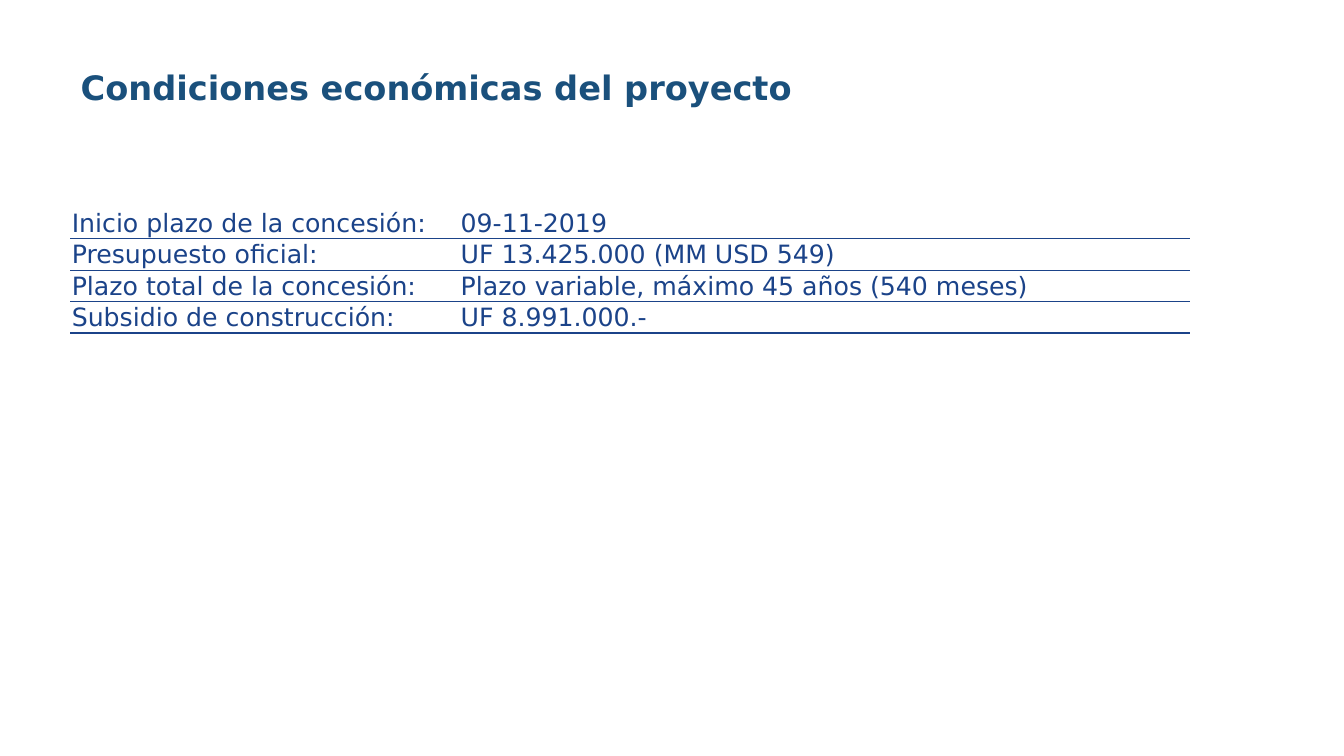
from typing import NamedTuple

import lxml.etree
import pptx
import pptx.dml.color
import pptx.enum.text
import pptx.oxml.ns
import pptx.slide
import pptx.table
import pptx.text.text
import pptx.util
from pptx.dml.color import RGBColor
from pptx.util import Cm

FONT_NAME = "DejaVu Sans"
TITLE_BLUE = RGBColor(0x1A, 0x50, 0x7C)
TABLE_BLUE = RGBColor(0x1B, 0x43, 0x89)
WHITE = RGBColor(0xFF, 0xFF, 0xFF)

LEFT = Cm(1.78)
COLUMN_WIDTHS = (Cm(9.8), Cm(18.4))
ROW_HEIGHT = Cm(0.79)
CELL_INSET = Cm(0.03)
BORDER_WIDTH = pptx.util.Pt(1)


class Condition(NamedTuple):
    label: str
    value: str


CONDITIONS = (
    Condition("Inicio plazo de la concesión:", "09-11-2019"),
    Condition("Presupuesto oficial:", "UF 13.425.000 (MM USD 549)"),
    Condition("Plazo total de la concesión:", "Plazo variable, máximo 45 años (540 meses)"),
    Condition("Subsidio de construcción:", "UF 8.991.000.-"),
)


def format_text(
    text_frame: pptx.text.text.TextFrame, size: int, color: RGBColor, bold: bool
) -> None:
    paragraph = text_frame.paragraphs[0]
    paragraph.alignment = pptx.enum.text.PP_ALIGN.LEFT
    for run in paragraph.runs:
        run.font.name = FONT_NAME
        run.font.size = pptx.util.Pt(size)
        run.font.bold = bold
        run.font.color.rgb = color


def set_borders(cell: pptx.table._Cell, top_color: RGBColor) -> None:
    """Rule the cell above and below, with white sides."""
    qualified = pptx.oxml.ns.qn
    properties = cell._tc.get_or_add_tcPr()
    borders = (("L", WHITE), ("R", WHITE), ("T", top_color), ("B", TABLE_BLUE))
    for position, (side, color) in enumerate(borders):
        line = lxml.etree.Element(qualified(f"a:ln{side}"), w=str(BORDER_WIDTH))
        fill = lxml.etree.SubElement(line, qualified("a:solidFill"))
        lxml.etree.SubElement(fill, qualified("a:srgbClr"), val=str(color))
        properties.insert(position, line)


def fill_cell(cell: pptx.table._Cell, text: str, top_color: RGBColor) -> None:
    cell.text_frame.text = text
    format_text(cell.text_frame, 18, TABLE_BLUE, False)
    cell.vertical_anchor = pptx.enum.text.MSO_ANCHOR.MIDDLE
    cell.margin_left = cell.margin_right = cell.margin_top = CELL_INSET
    cell.margin_bottom = 0
    cell.fill.background()
    set_borders(cell, top_color)


def add_title(slide: pptx.slide.Slide) -> None:
    title = slide.shapes.title
    title.left, title.top = LEFT, Cm(1.57)
    title.width, title.height = Cm(24.64), Cm(1.27)
    title.text_frame.text = "Condiciones económicas del proyecto"
    title.text_frame.word_wrap = True
    title.text_frame.vertical_anchor = pptx.enum.text.MSO_ANCHOR.MIDDLE
    format_text(title.text_frame, 24, TITLE_BLUE, True)


def add_conditions_table(slide: pptx.slide.Slide) -> None:
    table = slide.shapes.add_table(
        len(CONDITIONS), len(COLUMN_WIDTHS), LEFT, Cm(5.23),
        sum(COLUMN_WIDTHS), ROW_HEIGHT * len(CONDITIONS),
    ).table
    table.first_row = table.horz_banding = False
    for column, width in zip(table.columns, COLUMN_WIDTHS):
        column.width = width
    for row_index, (row, condition) in enumerate(zip(table.rows, CONDITIONS)):
        row.height = ROW_HEIGHT
        top_color = TABLE_BLUE if row_index else WHITE
        for cell, text in zip(row.cells, condition):
            fill_cell(cell, text, top_color)


def main() -> None:
    presentation = pptx.Presentation()
    presentation.slide_width, presentation.slide_height = Cm(33.87), Cm(19.05)
    slide = presentation.slides.add_slide(presentation.slide_layouts.get_by_name("Title Only"))
    add_title(slide)
    add_conditions_table(slide)
    presentation.save("out.pptx")


if __name__ == "__main__":
    main()
